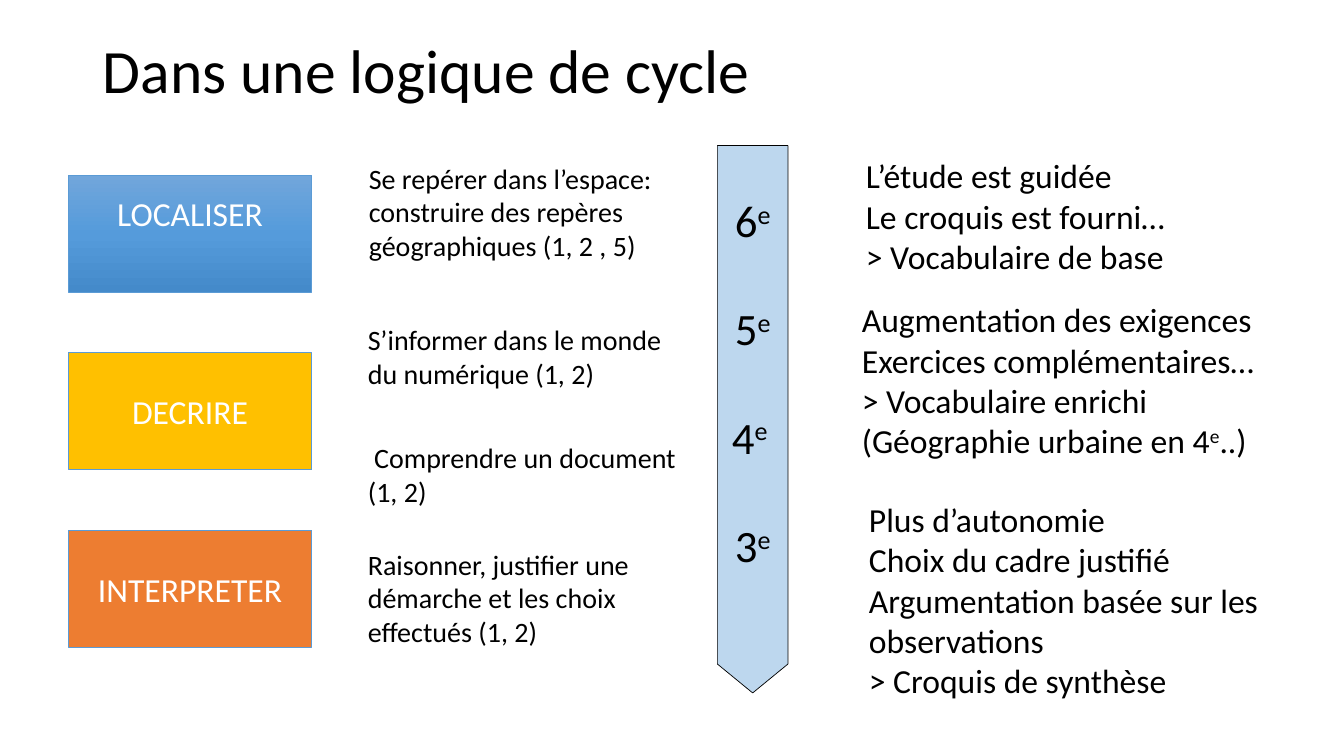
"""Build the slide on geography skills across the cycle."""
from copy import deepcopy

from pptx import Presentation
from pptx.dml.color import RGBColor
from pptx.enum.shapes import MSO_SHAPE as Shape
from pptx.enum.text import MSO_ANCHOR as Anchor, MSO_AUTO_SIZE as AutoSize, PP_ALIGN as Align
from pptx.util import Inches, Pt

THEME = {
    "font": "Calibri", "text": "000000", "light": "FFFFFF",
    "step_line": "5B9BD5", "arrow": "BDD7EE",
    "title_size": 44, "level_size": 32, "body_size": 24, "skill_size": 20,
}
TITLE = "Dans une logique de cycle"
STEPS = [
    ("LOCALISER", ["71A6DB", "559BDB", "448ACA"], 0.46),
    ("DECRIRE", ["FFC000"], 0.05),
    ("INTERPRETER", ["ED7D31"], 0.05),
]
SKILLS = [
    (3.56, 1.55, 1.11, "Se repérer dans l’espace: construire des repères géographiques (1, 2 , 5)"),
    (3.55, 3.15, 0.77, "S’informer dans le monde du numérique (1, 2)"),
    (3.55, 4.32, 0.77, " Comprendre un document (1, 2)"),
    (3.55, 5.38, 1.11, "Raisonner, justifier une démarche et les choix effectués (1, 2)"),
]
LEVELS = ["6^e^", "5^e^", "4^e ^", "3^e^"]
STAGES = [
    (8.49, 1.49, 1.31, ["L’étude est guidée", "Le croquis est fourni…", "> Vocabulaire de base"]),
    (8.45, 2.92, 1.72, ["Augmentation des exigences", "Exercices complémentaires…",
                        "> Vocabulaire enrichi", "(Géographie urbaine en 4^e^..)"]),
    (8.52, 4.9, 2.12, ["Plus d’autonomie", "Choix du cadre justifié",
                       "Argumentation basée sur les observations", "> Croquis de synthèse"]),
]


def color(name):
    return RGBColor.from_string(THEME.get(name, name))


def write(frame, lines, size, ink="text", align=Align.LEFT, gap=0):
    """Write lines, raising the parts held between carets."""
    frame.word_wrap = True
    for index, line in enumerate(lines):
        paragraph = frame.paragraphs[0] if index == 0 else frame.add_paragraph()
        paragraph.alignment = align
        paragraph.space_before = Pt(gap if index else 0)
        for position, part in enumerate(line.split("^")):
            if not part:
                continue
            run = paragraph.add_run()
            run.text = part
            run.font.name = THEME["font"]
            run.font.size = Pt(THEME[size])
            run.font.color.rgb = color(ink)
            if position % 2:
                run.font._element.set("baseline", "30000")


def add_text(slide, box, lines, size):
    shape = slide.shapes.add_textbox(*map(Inches, box))
    write(shape.text_frame, lines, size)
    shape.text_frame.auto_size = AutoSize.SHAPE_TO_FIT_TEXT
    return shape


def add_block(slide, preset, box, fills, line):
    shape = slide.shapes.add_shape(preset, *map(Inches, box))
    shape.shadow.inherit = False
    shape.line.color.rgb = color(line)
    shape.line.width = Pt(0.5)
    shape.text_frame.vertical_anchor = Anchor.MIDDLE
    if len(fills) == 1:
        shape.fill.solid()
        shape.fill.fore_color.rgb = color(fills[0])
        return shape
    shape.fill.gradient()
    shape.fill.gradient_angle = 270
    first = shape.fill.gradient_stops[0]._gs
    first.addnext(deepcopy(first))
    for index, (stop, fill) in enumerate(zip(shape.fill.gradient_stops, fills)):
        stop.color.rgb = color(fill)
        stop.position = index / (len(fills) - 1)
    return shape


def main():
    presentation = Presentation()
    presentation.slide_width, presentation.slide_height = Inches(13.33), Inches(7.5)
    slide = presentation.slides.add_slide(presentation.slide_layouts[6])

    title = add_text(slide, (0.92, 0, 11.5, 1.45), [TITLE], "title_size")
    title.text_frame.auto_size = AutoSize.NONE
    title.text_frame.vertical_anchor = Anchor.MIDDLE
    title.text_frame.paragraphs[0].line_spacing = 0.9

    for index, (label, fills, bottom) in enumerate(STEPS):
        box = (0.68, 1.74 + 1.76 * index, 2.41, 1.16)
        step = add_block(slide, Shape.FLOWCHART_PROCESS, box, fills, "step_line")
        step.text_frame.margin_bottom = Inches(bottom)
        write(step.text_frame, [label], "body_size", "light", Align.CENTER)

    for left, top, height, skill in SKILLS:
        add_text(slide, (left, top, 3.3, height), [skill], "skill_size")

    arrow = add_block(slide, Shape.PENTAGON, (4.75, 3.81, 5.43, 0.7), ["arrow"], "text")
    arrow.rotation = 90
    arrow.adjustments[0] = 0.41
    arrow.text_frame.margin_right = Inches(0.64)
    arrow.text_frame._txBody.bodyPr.set("vert", "vert270")
    write(arrow.text_frame, LEVELS, "level_size", align=Align.CENTER, gap=39)

    for left, top, height, lines in STAGES:
        add_text(slide, (left, top, 4.24, height), lines, "body_size")

    presentation.save("out.pptx")


if __name__ == "__main__":
    main()
